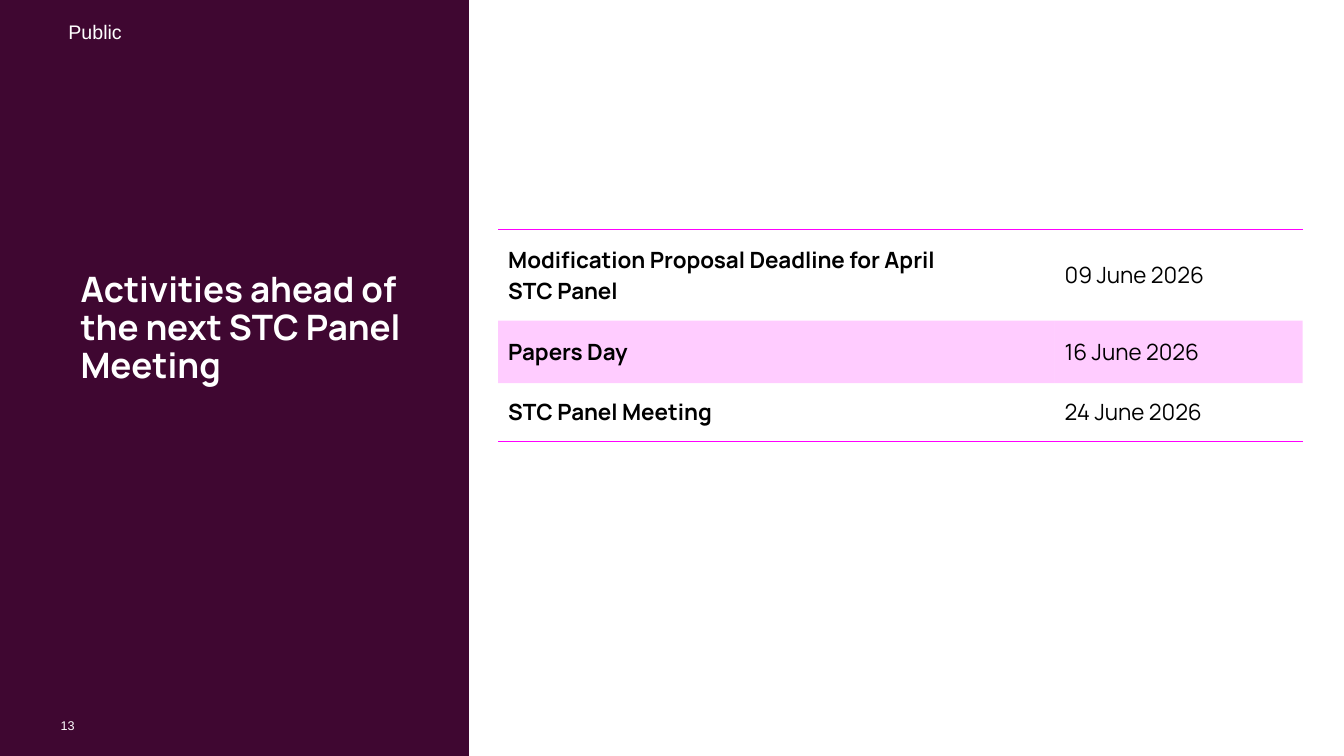
from dataclasses import dataclass

import lxml.etree
import pptx
import pptx.dml.color
import pptx.enum.shapes
import pptx.enum.text
import pptx.oxml.ns
import pptx.util

Inches = pptx.util.Inches
Align = pptx.enum.text.PP_ALIGN
Anchor = pptx.enum.text.MSO_ANCHOR


@dataclass(frozen=True)
class Theme:
    plum: str = "3F0731"
    pink: str = "FF00FF"
    white: str = "FFFFFF"
    black: str = "000000"
    sans: str = "Arial"
    brand: str = "Manrope"
    note: int = 9
    label: int = 14
    body: int = 16
    title: int = 25
    rule: int = 1
    tint: int = 20


@dataclass(frozen=True)
class Style:
    font: str
    size: int
    color: str
    bold: bool = False


@dataclass(frozen=True)
class Label:
    text: str
    left: float
    top: float
    width: float
    height: float
    style: Style
    anchor: Anchor = Anchor.TOP
    align: Align = Align.LEFT
    wrap: bool = True
    inset: bool = True
    spacing: float = 1.0


@dataclass(frozen=True)
class Event:
    name: str
    date: str
    height: float
    tinted: bool = False


THEME = Theme()
LABELS = [
    Label("13", 0.59, 7.12, 0.15, 0.15, Style(THEME.sans, THEME.note, THEME.white),
          Anchor.MIDDLE, Align.RIGHT, wrap=False, inset=False),
    Label("Public", 0.58, 0.15, 5, 0.34, Style(THEME.sans, THEME.label, THEME.white)),
    Label("Activities ahead of the next STC Panel Meeting", 0.7, 2.18, 3.88, 2.17,
          Style(THEME.brand, THEME.title, THEME.white, True), Anchor.MIDDLE, spacing=0.9),
]
EVENTS = [
    Event("Modification Proposal Deadline for April \nSTC Panel", "09 June 2026", 0.9),
    Event("Papers Day", "16 June 2026", 0.62, True),
    Event("STC Panel Meeting", "24 June 2026", 0.58),
]
WIDTHS = [5.52, 2.46]


def paint(color: str) -> pptx.dml.color.RGBColor:
    return pptx.dml.color.RGBColor.from_string(color)


def write(para, text: str, style: Style) -> None:
    for index, line in enumerate(text.split("\n")):
        if index:
            para.add_line_break()
        run = para.add_run()
        run.text = line
        run.font.name = style.font
        run.font.size = pptx.util.Pt(style.size)
        run.font.bold = style.bold
        run.font.color.rgb = paint(style.color)


def add_panel(slide) -> None:
    panel = slide.shapes.add_shape(
        pptx.enum.shapes.MSO_SHAPE.RECTANGLE, 0, 0, Inches(4.65), Inches(7.5))
    panel.shadow.inherit = False
    panel.fill.solid()
    panel.fill.fore_color.rgb = paint(THEME.plum)
    panel.line.fill.background()


def add_label(slide, label: Label) -> None:
    box = slide.shapes.add_textbox(
        Inches(label.left), Inches(label.top), Inches(label.width), Inches(label.height))
    frame = box.text_frame
    frame.word_wrap = label.wrap
    frame.vertical_anchor = label.anchor
    if not label.inset:
        frame.margin_left = frame.margin_right = 0
        frame.margin_top = frame.margin_bottom = 0
    para = frame.paragraphs[0]
    para.alignment = label.align
    para.line_spacing = label.spacing
    write(para, label.text, label.style)


def add_edges(cell, ruled: str) -> None:
    qn = pptx.oxml.ns.qn
    props = cell._tc.get_or_add_tcPr()
    for side in "LRTB":
        edge = lxml.etree.SubElement(props, qn(f"a:ln{side}"))
        if side in ruled:
            edge.set("w", str(pptx.util.Pt(THEME.rule)))
            fill = lxml.etree.SubElement(edge, qn("a:solidFill"))
            lxml.etree.SubElement(fill, qn("a:srgbClr"), val=THEME.pink)
        else:
            lxml.etree.SubElement(edge, qn("a:noFill"))


def fill_cell(cell, tinted: bool) -> None:
    if not tinted:
        cell.fill.background()
        return
    qn = pptx.oxml.ns.qn
    cell.fill.solid()
    cell.fill.fore_color.rgb = paint(THEME.pink)
    color = cell._tc.tcPr.find(qn("a:solidFill")).find(qn("a:srgbClr"))
    lxml.etree.SubElement(color, qn("a:alpha"), val=str(THEME.tint * 1000))


def add_dates(slide) -> None:
    height = sum(event.height for event in EVENTS)
    table = slide.shapes.add_table(
        len(EVENTS), len(WIDTHS), Inches(4.94), Inches(2.28),
        Inches(sum(WIDTHS)), Inches(height)).table
    table.first_row = False
    table.horz_banding = False
    for column, width in zip(table.columns, WIDTHS):
        column.width = Inches(width)
    last = len(EVENTS) - 1
    for index, event in enumerate(EVENTS):
        table.rows[index].height = Inches(event.height)
        ruled = {0: "T", last: "B"}.get(index, "")
        for place, text in enumerate((event.name, event.date)):
            cell = table.cell(index, place)
            cell.vertical_anchor = Anchor.MIDDLE
            add_edges(cell, ruled)
            fill_cell(cell, event.tinted)
            style = Style(THEME.brand, THEME.body, THEME.black, place == 0)
            write(cell.text_frame.paragraphs[0], text, style)


def main() -> None:
    deck = pptx.Presentation()
    deck.slide_width = Inches(13.33)
    deck.slide_height = Inches(7.5)
    slide = deck.slides.add_slide(deck.slide_layouts[6])
    add_panel(slide)
    for label in LABELS:
        add_label(slide, label)
    add_dates(slide)
    deck.save("out.pptx")


if __name__ == "__main__":
    main()
